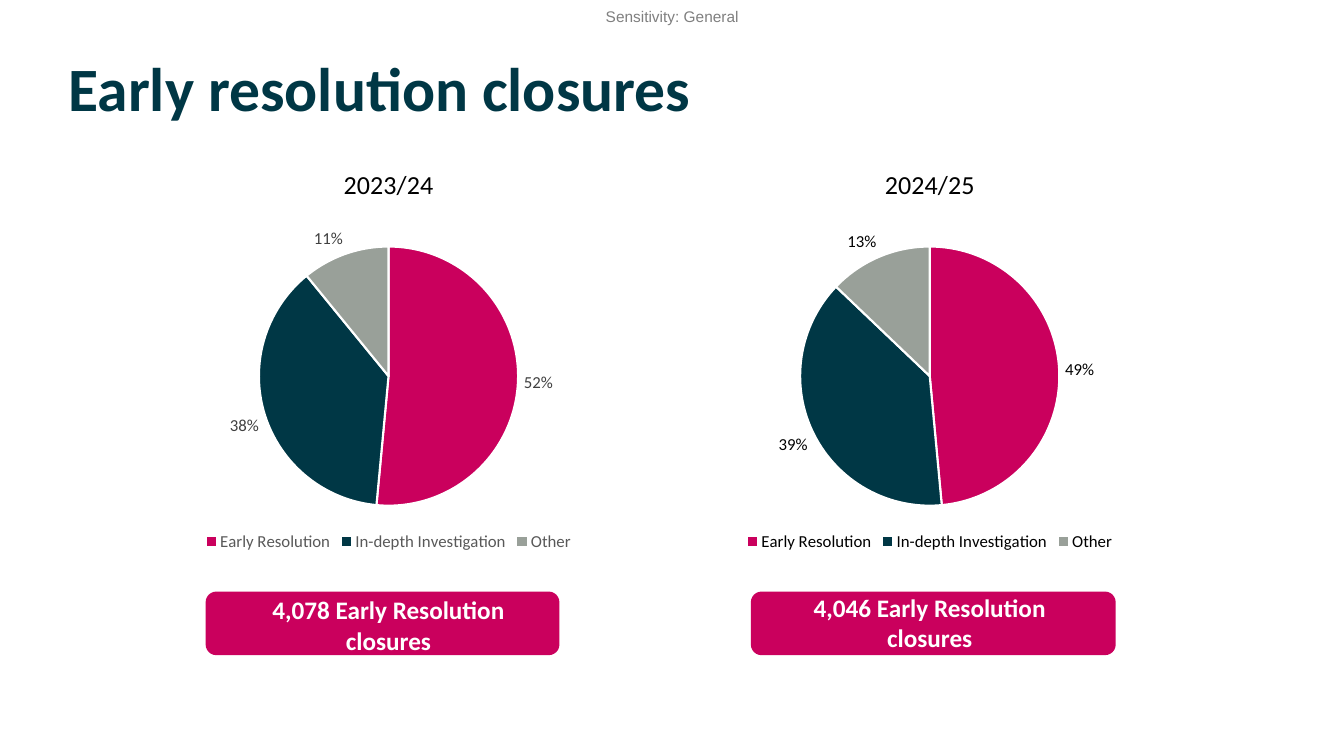
from dataclasses import dataclass

from lxml import etree
from pptx import Presentation
from pptx import util as u
from pptx.chart import data as chart_data
from pptx.dml.color import RGBColor
from pptx.enum import chart as charts, shapes, text
from pptx.oxml.ns import qn


@dataclass(frozen=True)
class Theme:
    font: str = "Calibri"
    label_font: str = "Arial"
    pink: str = "CA005D"
    teal: str = "003745"
    stone: str = "99A099"
    white: str = "FFFFFF"
    black: str = "000000"
    grey: str = "7F7F7F"
    legend_grey: str = "595959"
    label_grey: str = "404040"
    title_size: float = 44
    chart_title_size: float = 18.6
    badge_size: float = 18
    chart_size: float = 12
    marking_size: float = 11


@dataclass(frozen=True)
class Box:
    left: float
    top: float
    width: float
    height: float

    def points(self):
        return [u.Pt(n) for n in (self.left, self.top, self.width, self.height)]


@dataclass(frozen=True)
class Year:
    name: str
    values: tuple
    closures: str
    legend_color: str
    label_color: str
    badge_shift: float
    badge_width: float
    text_rise: float


THEME = Theme()
CATEGORIES = ("Early Resolution", "In-depth Investigation", "Other")
SLICE_COLORS = (THEME.pink, THEME.teal, THEME.stone)
PIE_LAYOUT = {"x": 0.27, "y": 0.24, "w": 0.46, "h": 0.64}
YEARS = (
    Year("2023/24", (52, 38, 11), "4,078 Early Resolution closures",
         THEME.legend_grey, THEME.label_grey, -4.3, 252.7, 1.4),
    Year("2024/25", (49, 39, 13), "4,046 Early Resolution closures",
         THEME.black, THEME.black, 2.5, 260.6, 2.9),
)


def style_font(font, size, color, name=THEME.font, bold=False):
    font.size, font.name, font.bold = u.Pt(size), name, bold
    font.color.rgb = RGBColor.from_string(color)


def add_text(page, box, words, size, color, name=THEME.font, bold=False,
             align=text.PP_ALIGN.LEFT, anchor=text.MSO_ANCHOR.TOP,
             inset=(7.2, 3.6), spacing=None, wrap=True):
    frame = page.shapes.add_textbox(*box.points()).text_frame
    frame.word_wrap = wrap
    frame.auto_size = text.MSO_AUTO_SIZE.SHAPE_TO_FIT_TEXT
    frame.vertical_anchor = anchor
    frame.margin_left = frame.margin_right = u.Pt(inset[0])
    frame.margin_top = frame.margin_bottom = u.Pt(inset[1])
    para = frame.paragraphs[0]
    para.alignment = align
    para.line_spacing = spacing
    span = para.add_run()
    span.text = words
    style_font(span.font, size, color, name, bold)


def fix_plot_area(chart):
    """Pin the inner plot area to fractions of the chart frame."""
    area = chart._chartSpace.chart.plotArea
    for old in area.findall(qn("c:layout")):
        area.remove(old)
    layout = etree.Element(qn("c:layout"))
    manual = etree.SubElement(layout, qn("c:manualLayout"))
    settings = {"layoutTarget": "inner", "xMode": "edge", "yMode": "edge", **PIE_LAYOUT}
    for tag, value in settings.items():
        etree.SubElement(manual, qn(f"c:{tag}")).set("val", str(value))
    area.insert(0, layout)


def add_pie(page, box, year):
    source = chart_data.CategoryChartData(number_format='0"%"')
    source.categories = CATEGORIES
    source.add_series(year.name, year.values)
    chart = page.shapes.add_chart(charts.XL_CHART_TYPE.PIE, *box.points(), source).chart
    style_font(chart.font, THEME.chart_size, THEME.black)
    fix_plot_area(chart)

    chart.has_title = True
    title = chart.chart_title
    title.include_in_layout = False
    title.text_frame.text = year.name
    style_font(title.text_frame.paragraphs[0].runs[0].font,
               THEME.chart_title_size, THEME.black)

    chart.has_legend = True
    chart.legend.position = charts.XL_LEGEND_POSITION.BOTTOM
    chart.legend.include_in_layout = False
    style_font(chart.legend.font, THEME.chart_size, year.legend_color)

    plot = chart.plots[0]
    plot.vary_by_categories = True
    plot.has_data_labels = True
    labels = plot.data_labels
    labels.show_value = True
    labels.show_percentage = False
    labels.number_format = '0"%"'
    labels.number_format_is_linked = False
    labels.position = charts.XL_LABEL_POSITION.OUTSIDE_END
    style_font(labels.font, THEME.chart_size, year.label_color)

    for index, color in enumerate(SLICE_COLORS):
        piece = plot.series[0].points[index].format
        piece.fill.solid()
        piece.fill.fore_color.rgb = RGBColor.from_string(color)
        piece.line.color.rgb = RGBColor.from_string(THEME.white)
        piece.line.width = u.Pt(1.5)


def add_badge(page, box, year):
    """Place the closures total, its text centred in the box."""
    left = box.left + (box.width - year.badge_width) / 2 + year.badge_shift
    outline = Box(left, box.top, year.badge_width, box.height)
    badge = page.shapes.add_shape(shapes.MSO_SHAPE.ROUNDED_RECTANGLE, *outline.points())
    badge.shadow.inherit = False
    badge.fill.solid()
    badge.fill.fore_color.rgb = RGBColor.from_string(THEME.pink)
    badge.line.fill.background()

    text_width = 223.6
    words_box = Box(box.left + (box.width - text_width) / 2,
                    box.top - year.text_rise, text_width, box.height)
    add_text(page, words_box, year.closures, THEME.badge_size, THEME.white,
             bold=True, align=text.PP_ALIGN.CENTER)


def add_year(page, box, year):
    add_pie(page, Box(box.left, box.top, box.width, 290.9), year)
    add_badge(page, Box(box.left, box.top + 316.8, box.width, 45.4), year)


def add_heading(page, box):
    add_text(page, Box(box.left + 432.7, box.top + 5, 97.9, 13), "Sensitivity: General",
             THEME.marking_size, THEME.grey, name=THEME.label_font,
             inset=(0, 0), wrap=False)
    add_text(page, Box(box.left + 41.8, box.top + 37.4, 903.6, 55.4),
             "Early resolution closures", THEME.title_size, THEME.teal, bold=True,
             anchor=text.MSO_ANCHOR.MIDDLE, spacing=0.9)


def main():
    deck = Presentation()
    deck.slide_width, deck.slide_height = u.Pt(960), u.Pt(540)
    page = deck.slides.add_slide(deck.slide_layouts[6])
    add_heading(page, Box(0, 0, 960, 100))
    for index, year in enumerate(YEARS):
        add_year(page, Box(76.3 + index * 386.6, 105.8, 402.5, 362.2), year)
    deck.save("out.pptx")


if __name__ == "__main__":
    main()
